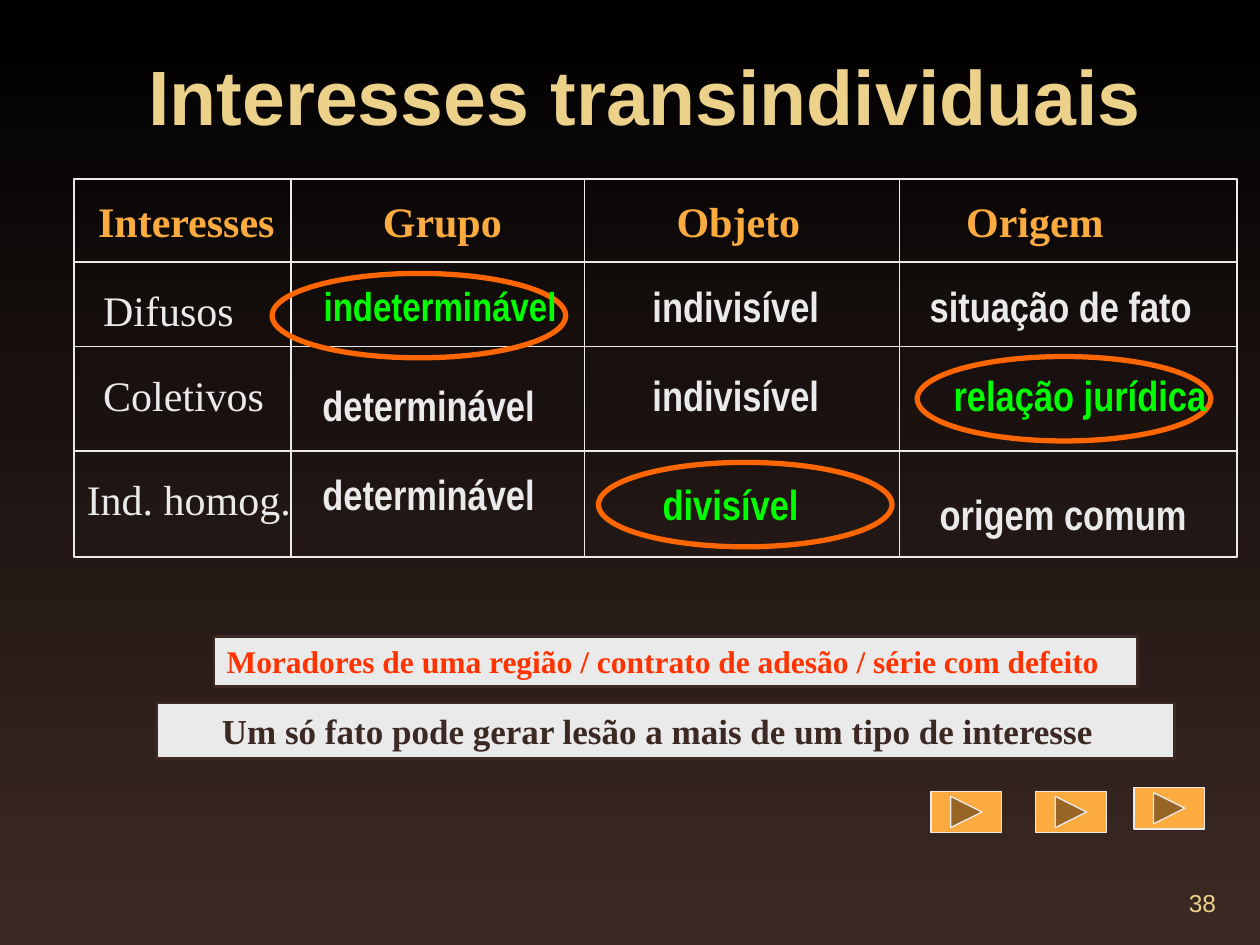
from pptx import Presentation
from pptx.dml.color import RGBColor
from pptx.enum.shapes import MSO_CONNECTOR, MSO_SHAPE
from pptx.enum.text import MSO_ANCHOR, MSO_AUTO_SIZE, PP_ALIGN
from pptx.oxml.ns import qn
from pptx.util import Inches, Pt
from lxml import etree

RECTANGLE, OVAL = MSO_SHAPE.RECTANGLE, MSO_SHAPE.OVAL
NEXT_BUTTON = MSO_SHAPE.ACTION_BUTTON_FORWARD_OR_NEXT
STRAIGHT = MSO_CONNECTOR.STRAIGHT
TOP, MIDDLE, BOTTOM = MSO_ANCHOR.TOP, MSO_ANCHOR.MIDDLE, MSO_ANCHOR.BOTTOM
LEFT, CENTER, RIGHT = PP_ALIGN.LEFT, PP_ALIGN.CENTER, PP_ALIGN.RIGHT
GROW, FIXED = MSO_AUTO_SIZE.SHAPE_TO_FIT_TEXT, MSO_AUTO_SIZE.NONE

SAND, ORANGE, PALE, BROWN = "EBD189", "FCAB40", "EAEAEA", "3C2924"
GREEN, RED, RING = "00FF00", "FF3300", "FF6600"
SERIF, NARROW = "Times New Roman", "Arial Narrow"

TITLE = {"name": "Arial", "size": Pt(44), "bold": True, "color": SAND}
NUMBER = {"name": "Arial", "size": Pt(14), "color": SAND}
HEADING = {"name": SERIF, "size": Pt(24), "bold": True, "color": ORANGE}
ROW_LABEL = {"name": SERIF, "size": Pt(24), "color": PALE}
VALUE = {"name": NARROW, "size": Pt(24), "bold": True, "color": PALE}
MARKED = {**VALUE, "color": GREEN}

GRID_X = [0.59, 2.31, 4.64, 7.14, 9.82]
GRID_Y = [1.42, 2.08, 2.75, 3.58, 4.42]


def rgb(color):
    return RGBColor.from_string(color)


def write(shape, lines, style, align=LEFT, anchor=TOP, wrap=True, grow=True):
    """Fill a shape with lines; those after the first are set wider apart."""
    frame = shape.text_frame
    frame.word_wrap = wrap
    frame.auto_size = GROW if grow else FIXED
    frame.vertical_anchor = anchor
    for index, line in enumerate(lines):
        para = frame.add_paragraph() if index else frame.paragraphs[0]
        para.alignment = align
        if index:
            para.line_spacing = 1.3
            para.space_before = Pt(13.5)
        span = para.add_run()
        span.text = line
        for key, value in style.items():
            if key == "color":
                span.font.color.rgb = rgb(value)
            else:
                setattr(span.font, key, value)


def add_text(slide, area, lines, style, **layout):
    box = slide.shapes.add_textbox(*map(Inches, area))
    write(box, lines, style, **layout)


def add_box(slide, kind, area, line, width, fill=None):
    shape = slide.shapes.add_shape(kind, *map(Inches, area))
    shape.shadow.inherit = False
    if fill:
        shape.fill.solid()
        shape.fill.fore_color.rgb = rgb(fill)
    else:
        shape.fill.background()
    shape.line.color.rgb = rgb(line)
    shape.line.width = Pt(width)
    return shape


def add_rule(slide, *ends):
    rule = slide.shapes.add_connector(STRAIGHT, *map(Inches, ends))
    rule.line.color.rgb = rgb(PALE)
    rule.line.width = Pt(1)
    etree.SubElement(rule.element.spPr, qn("a:effectLst"))


def add_banner(slide, area, text, size, color, indent=0.1):
    banner = add_box(slide, RECTANGLE, area, BROWN, 1.5, PALE)
    style = {"name": SERIF, "size": Pt(size), "bold": True, "color": color}
    write(banner, [text], style)
    banner.text_frame.margin_left = Inches(indent)


def add_marked(slide, ring, area, text, size=24):
    """Ringed table value in green."""
    add_box(slide, OVAL, (*ring, 2.33, 0.67), RING, 3)
    add_text(slide, area, [text], {**MARKED, "size": Pt(size)})


def paint_background(slide):
    fill = slide.background.fill
    fill.gradient()
    fill.gradient_angle = 270
    for stop, color, position in zip(fill.gradient_stops, ("000000", BROWN), (0, 1)):
        stop.color.rgb = rgb(color)
        stop.position = position


def add_grid(slide):
    left, right = GRID_X[0], GRID_X[-1]
    top, bottom = GRID_Y[0], GRID_Y[-1]
    add_box(slide, RECTANGLE, (left, top, right - left, bottom - top), PALE, 1)
    for y in GRID_Y[1:-1]:
        add_rule(slide, left, y, right, y)
    for x in GRID_X[1:-1]:
        add_rule(slide, x, top, x, bottom)


def add_labels(slide):
    headings = [("Interesses", 0.68, 1.61, LEFT), ("Grupo", 2.94, 1.15, LEFT),
                ("Objeto", 5.27, 1.18, CENTER), ("Origem", 7.57, 1.29, LEFT)]
    for text, x, width, align in headings:
        add_text(slide, (x, 1.5, width, 0.5), [text], HEADING, align=align, wrap=False)
    rows = [("Difusos", 0.72, 6.74), ("Coletivos", 0.72, 6.81), ("Ind. homog.", 0.59, 6.99)]
    for (text, x, width), y in zip(rows, GRID_Y[1:]):
        add_text(slide, (x, y + 0.13, width, 0.5), [text], ROW_LABEL)


def add_values(slide):
    add_marked(slide, (4.75, 3.67), (5.16, 3.75, 2.05, 0.5), "divisível")
    add_text(slide, (5.08, 2.18, 2.05, 1.23), ["indivisível"] * 2, VALUE)
    add_marked(slide, (2.16, 2.17), (2.47, 2.18, 2.76, 0.48), "indeterminável", 23)
    add_text(slide, (2.46, 2.96, 2.68, 1.22), ["determinável"] * 2, VALUE)
    add_marked(slide, (7.28, 2.83), (7.47, 2.88, 2.36, 0.5), "relação jurídica")
    add_text(slide, (7.36, 3.83, 2.44, 0.5), ["origem comum"], VALUE)
    add_text(slide, (7.28, 2.18, 2.44, 0.5), ["situação de fato"], VALUE)


def main():
    deck = Presentation()
    deck.slide_width, deck.slide_height = Inches(10), Inches(7.5)
    slide = deck.slides.add_slide(deck.slide_layouts[6])
    paint_background(slide)
    add_text(slide, (7.67, 6.83, 2.08, 0.5), ["38"], NUMBER,
             align=RIGHT, anchor=BOTTOM, grow=False)
    add_text(slide, (1.08, 0.25, 8.5, 1), ["Interesses transindividuais"], TITLE,
             anchor=MIDDLE, grow=False)
    add_grid(slide)
    add_labels(slide)
    add_values(slide)
    add_banner(slide, (1.7, 5.05, 7.33, 0.4),
               "Moradores de uma região / contrato de adesão / série com defeito", 18, RED)
    add_banner(slide, (1.24, 5.58, 8.08, 0.44),
               "Um só fato pode gerar lesão a mais de um tipo de interesse", 20, BROWN, 0.52)
    for x, y in ((7.39, 6.28), (8.22, 6.28), (9, 6.25)):
        add_box(slide, NEXT_BUTTON, (x, y, 0.56, 0.33), PALE, 0.75, ORANGE)
    deck.save("out.pptx")


if __name__ == "__main__":
    main()
